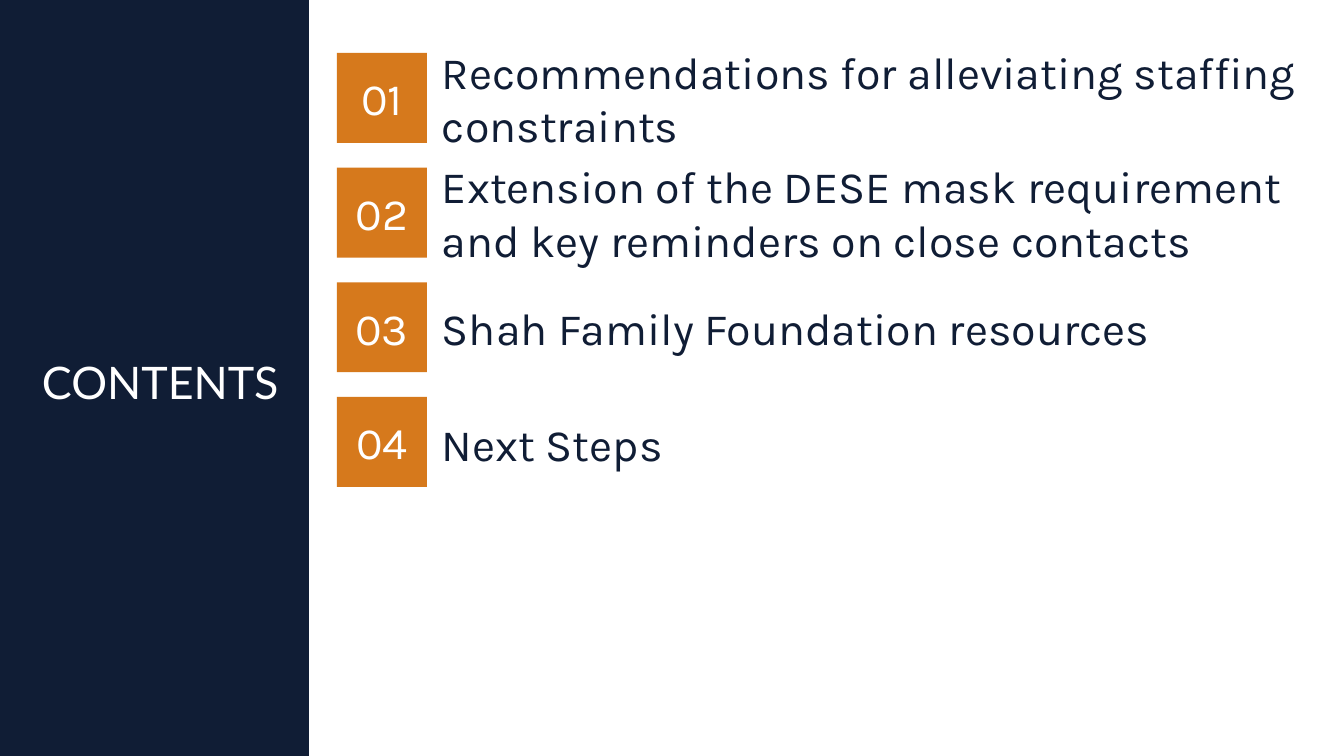
from pptx import Presentation
from pptx.dml.color import RGBColor
from pptx.enum.shapes import MSO_SHAPE
from pptx.enum.text import MSO_ANCHOR, PP_ALIGN
from pptx.util import Pt

RECTANGLE = MSO_SHAPE.RECTANGLE
MIDDLE = MSO_ANCHOR.MIDDLE
LEFT, CENTER = PP_ALIGN.LEFT, PP_ALIGN.CENTER

# Content
TITLE = "CONTENTS"
TOPICS = [
    "Recommendations for alleviating staffing constraints",
    "Extension of the DESE mask requirement and key reminders on close contacts",
    "Shah Family Foundation resources",
    "Next Steps",
]

# Look and layout, in px
COLORS = {"navy": "101D35", "orange": "D6791C", "white": "FFFFFF"}
EMU_PER_PX = 914400 / 100.8
PAGE_WIDTH, PAGE_HEIGHT = 1344, 756
PANEL_WIDTH = 309
TITLE_AREA = (32, 312, 278, 146)
TILE_LEFT, TILE_SIZE = 337, 90
TOPIC_LEFT, TOPIC_WIDTH = 432, 880
FIRST_TOP, LAST_TOP = 53, 397
LAST_TOPIC_DROP = 4


def px(length):
    return round(length * EMU_PER_PX)


def color(name):
    return RGBColor.from_string(COLORS[name])


def add_block(page, area, fill):
    block = page.shapes.add_shape(RECTANGLE, *map(px, area))
    block.shadow.inherit = False
    block.fill.solid()
    block.fill.fore_color.rgb = color(fill)
    block.line.fill.background()
    return block


def write(box, text, font="Karla", ink="navy", align=LEFT, spacing=None):
    frame = box.text_frame
    frame.word_wrap = True
    frame.vertical_anchor = MIDDLE
    para = frame.paragraphs[0]
    para.alignment = align
    para.line_spacing = spacing
    span = para.add_run()
    span.text = text
    span.font.name = font
    span.font.size = Pt(32)
    span.font.color.rgb = color(ink)


def main():
    deck = Presentation()
    deck.slide_width, deck.slide_height = px(PAGE_WIDTH), px(PAGE_HEIGHT)
    page = deck.slides.add_slide(deck.slide_layouts[6])

    # Side panel with the title
    add_block(page, (0, 0, PANEL_WIDTH, PAGE_HEIGHT), "navy")
    title = page.shapes.add_textbox(*map(px, TITLE_AREA))
    write(title, TITLE, font="Lato", ink="white", spacing=0.9)

    # Numbered topics, evenly spaced
    last = len(TOPICS) - 1
    pitch = (LAST_TOP - FIRST_TOP) / last
    for index, topic in enumerate(TOPICS):
        top = FIRST_TOP + index * pitch
        tile = add_block(page, (TILE_LEFT, top, TILE_SIZE, TILE_SIZE), "orange")
        write(tile, f"{index + 1:02}", ink="white", align=CENTER)

        drop = LAST_TOPIC_DROP if index == last else 0
        area = (TOPIC_LEFT, top + drop, TOPIC_WIDTH, TILE_SIZE - drop)
        write(page.shapes.add_textbox(*map(px, area)), topic)

    deck.save("out.pptx")


if __name__ == "__main__":
    main()
